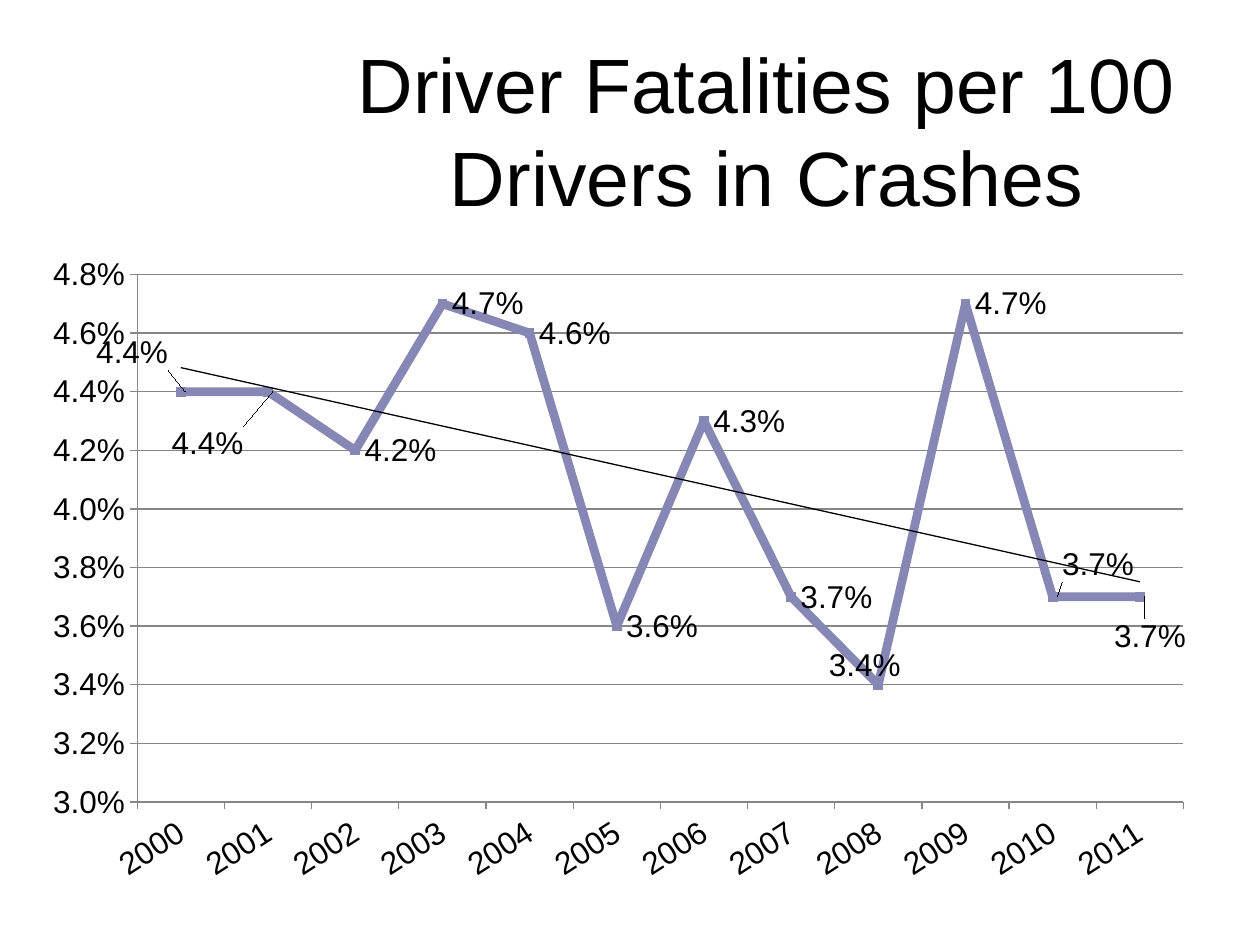
from pptx import Presentation
from pptx.chart.data import CategoryChartData as Data
from pptx.dml.color import RGBColor as Rgb
from pptx.enum.chart import XL_CHART_TYPE as Kind, XL_LABEL_POSITION as Spot
from pptx.enum.chart import XL_MARKER_STYLE as Mark, XL_TICK_MARK as Tick
from pptx.enum.text import MSO_ANCHOR as Anchor, PP_ALIGN as Align
from pptx.oxml import parse_xml
from pptx.oxml.ns import nsdecls
from pptx.util import Inches, Pt

COLORS = {"text": "000000", "line": "8787B5", "grid": "868686"}
YEARS = [str(year) for year in range(2000, 2012)]
RATES = [0.044, 0.044, 0.042, 0.047, 0.046, 0.036,
         0.043, 0.037, 0.034, 0.047, 0.037, 0.037]
SHIFTS = {0: (-0.08, -0.06), 1: (-0.09, 0.08), 8: (-0.05, -0.03),
          10: (0, -0.05), 11: (-0.03, 0.06)}
SCALE = {"minimum_scale": 0.03, "maximum_scale": 0.048, "major_unit": 0.002,
         "has_major_gridlines": True}
FORMAT = "0.0%"


def color(name):
    """Return a named colour."""
    return Rgb.from_string(COLORS[name])


def set_all(item, values):
    """Set each attribute in a dict on an item."""
    for name, value in values.items():
        setattr(item, name, value)


def style_font(font, size):
    """Give a font its face, size and colour."""
    set_all(font, {"name": "Arial", "size": Pt(size), "bold": False})
    font.color.rgb = color("text")


def style_line(line, name, width):
    """Give a line its colour and width."""
    line.color.rgb = color(name)
    line.width = Pt(width)


def make_layout(x, y, size=None):
    """Return a manual layout, sized for a plot or shifted for a label."""
    parts = {"x": x, "y": y}
    modes = ""
    if size:
        parts.update(w=size[0], h=size[1])
        modes = ('<c:layoutTarget val="inner"/><c:xMode val="edge"/>'
                 '<c:yMode val="edge"/>')
    body = "".join(f'<c:{key} val="{val}"/>' for key, val in parts.items())
    return parse_xml(f'<c:layout {nsdecls("c")}><c:manualLayout>{modes}{body}'
                     '</c:manualLayout></c:layout>')


def make_trend():
    """Return a thin linear trend line."""
    return parse_xml(
        f'<c:trendline {nsdecls("c", "a")}><c:spPr><a:ln w="9525"><a:solidFill>'
        f'<a:srgbClr val="{COLORS["text"]}"/></a:solidFill></a:ln></c:spPr>'
        '<c:trendlineType val="linear"/><c:dispRSqr val="0"/>'
        '<c:dispEq val="0"/></c:trendline>')


def add_title(slide, text):
    """Add the centred title."""
    box = slide.shapes.add_textbox(Inches(2.67), Inches(0.75), Inches(6.83), Inches(1.25))
    frame = box.text_frame
    set_all(frame, {"word_wrap": True, "vertical_anchor": Anchor.MIDDLE,
                    "margin_bottom": Inches(0.75)})
    para = frame.paragraphs[0]
    set_all(para, {"text": text, "alignment": Align.CENTER})
    style_font(para.font, 44)


def style_axes(chart):
    """Set scale, ticks, grid and label angle."""
    rates, years = chart.value_axis, chart.category_axis
    set_all(rates, SCALE)
    style_line(rates.major_gridlines.format.line, "grid", 0.75)
    for axis in (rates, years):
        set_all(axis, {"major_tick_mark": Tick.OUTSIDE, "minor_tick_mark": Tick.NONE})
        style_line(axis.format.line, "grid", 0.75)
        style_font(axis.tick_labels.font, 18)
    set_all(rates.tick_labels, {"number_format": FORMAT, "number_format_is_linked": False})
    years._element.txPr.bodyPr.set("rot", "-1980000")


def style_series(series):
    """Set line, markers, labels and trend of the series."""
    series.smooth = False
    style_line(series.format.line, "line", 5)
    marker = series.marker
    set_all(marker, {"style": Mark.SQUARE, "size": 5})
    marker.format.fill.solid()
    marker.format.fill.fore_color.rgb = color("line")
    style_line(marker.format.line, "line", 0.75)
    labels = series.data_labels
    set_all(labels, {"show_value": True, "position": Spot.RIGHT,
                     "number_format": FORMAT, "number_format_is_linked": False})
    style_font(labels.font, 18)
    for index, shift in SHIFTS.items():
        label = series.points[index].data_label
        label.position = Spot.RIGHT
        style_font(label.font, 18)
        idx = series._element.xpath(f'c:dLbls/c:dLbl/c:idx[@val="{index}"]')[0]
        idx.addnext(make_layout(*shift))
    series._element.xpath("c:dLbls")[0].addnext(make_trend())


def add_graph(slide):
    """Add the line chart of fatality rates."""
    data = Data(number_format=FORMAT)
    data.categories = YEARS
    data.add_series("Series 1", RATES)
    chart = slide.shapes.add_chart(Kind.LINE_MARKERS, Inches(0.25), Inches(1.92),
                                   Inches(9.33), Inches(5.17), data).chart
    set_all(chart, {"has_legend": False, "has_title": False})
    style_font(chart.font, 18)
    plot = chart.plots[0]
    plot.vary_by_categories = False
    style_axes(chart)
    style_series(plot.series[0])
    area = chart._chartSpace.chart.plotArea
    for old in area.xpath("c:layout"):
        area.remove(old)
    area.insert(0, make_layout(0.09, 0.05, (0.89, 0.81)))


def main():
    """Build and save the slide."""
    deck = Presentation()
    set_all(deck, {"slide_width": Inches(10), "slide_height": Inches(7.5)})
    slide = deck.slides.add_slide(deck.slide_layouts[6])
    add_title(slide, "Driver Fatalities per 100 Drivers in Crashes")
    add_graph(slide)
    deck.save("out.pptx")


if __name__ == "__main__":
    main()
